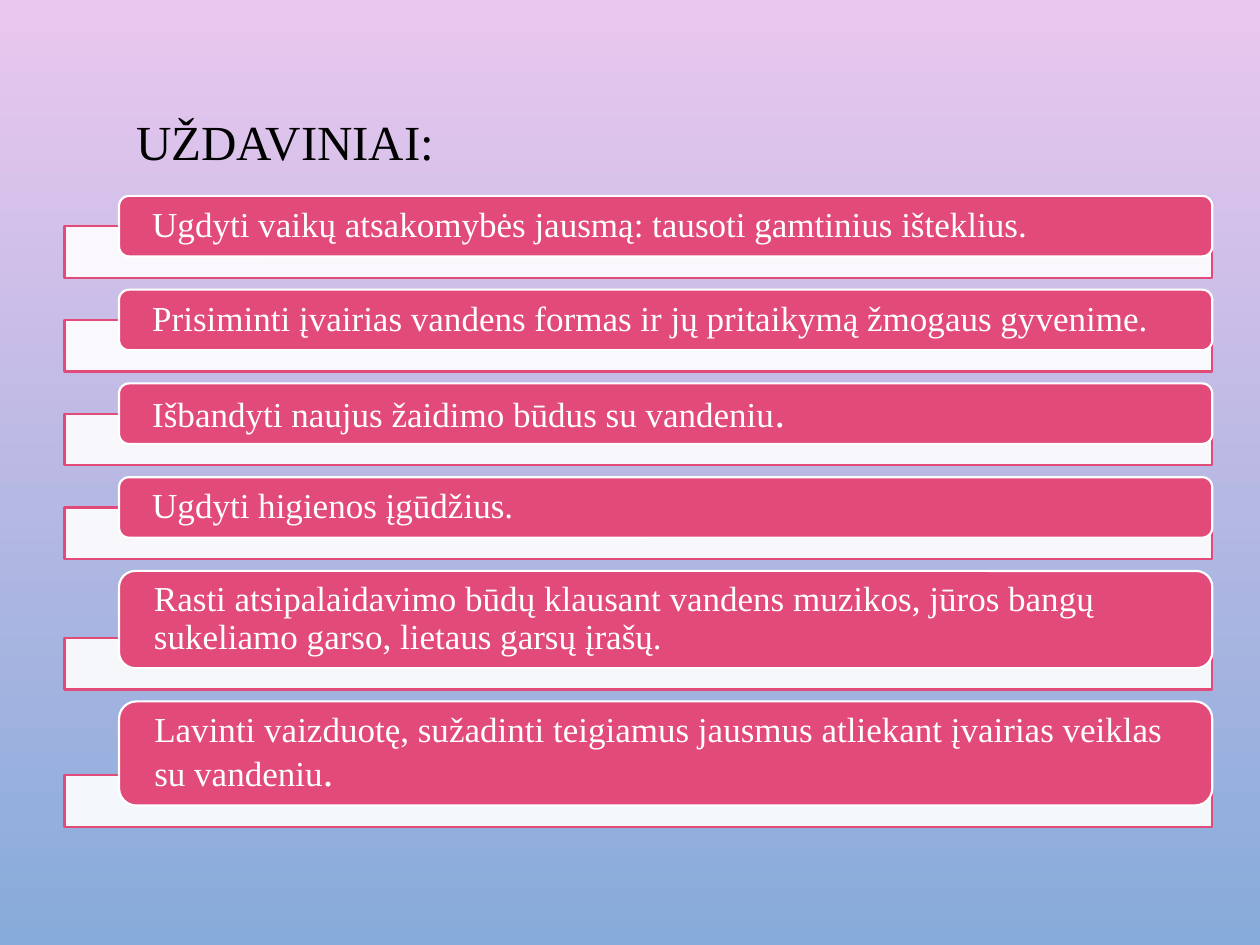
from lxml.etree import SubElement
from pptx import Presentation
from pptx.dml.color import RGBColor
from pptx.enum.shapes import MSO_SHAPE
from pptx.enum.text import MSO_ANCHOR, PP_ALIGN
from pptx.oxml.ns import qn
from pptx.util import Cm, Pt

PINK = RGBColor(0xE2, 0x4A, 0x79)
WHITE = RGBColor(0xFF, 0xFF, 0xFF)
BLACK = RGBColor(0, 0, 0)
LILAC = RGBColor(0xEA, 0xC7, 0xEE)
BLUE = RGBColor(0x87, 0xAB, 0xDA)
FONT = "Times New Roman"

BAR = 1.04
INDENT = 1.1
TAIL = 0.43
GAP = 0.24

TASKS = [
    (1.22, ["Ugdyti vaikų atsakomybės jausmą: tausoti gamtinius išteklius."]),
    (1.22, ["Prisiminti įvairias vandens formas ir jų pritaikymą žmogaus gyvenime."]),
    (1.22, ["Išbandyti naujus žaidimo būdus su vandeniu", "."]),
    (1.22, ["Ugdyti higienos įgūdžius."]),
    (1.96, ["Rasti atsipalaidavimo būdų klausant vandens muzikos, jūros bangų "
            "sukeliamo garso, lietaus garsų įrašų."]),
    (2.1, ["Lavinti vaizduotę, sužadinti teigiamus jausmus atliekant įvairias "
           "veiklas su vandeniu", "."]),
]


def set_font(para, size, color):
    para.font.name = FONT
    para.font.size = Pt(size)
    para.font.color.rgb = color


def add_box(slide, kind, left, top, width, height, fill, line):
    box = slide.shapes.add_shape(kind, Cm(left), Cm(top), Cm(width), Cm(height))
    box.shadow.inherit = False
    box.fill.solid()
    box.fill.fore_color.rgb = fill
    box.line.color.rgb = line
    box.line.width = Pt(1.25)
    return box


def add_task(slide, left, top, width, height, parts):
    bar = add_box(slide, MSO_SHAPE.RECTANGLE, left, top + height + TAIL - BAR,
                  width, BAR, WHITE, PINK)
    tint = bar.fill._xPr.find(qn("a:solidFill"))[0]
    SubElement(tint, qn("a:alpha")).set("val", "90000")

    pill = add_box(slide, MSO_SHAPE.ROUNDED_RECTANGLE, left + INDENT, top,
                   width - INDENT, height, PINK, WHITE)
    frame = pill.text_frame
    frame.word_wrap = True
    frame.vertical_anchor = MSO_ANCHOR.MIDDLE
    frame.margin_left = frame.margin_right = Cm(0.61)
    frame.margin_top = frame.margin_bottom = 0
    para = frame.paragraphs[0]
    para.alignment = PP_ALIGN.LEFT
    para.line_spacing = 0.9
    set_font(para, 20, WHITE)
    for part in parts:
        run = para.add_run()
        run.text = part
        if part == ".":
            run.font.size = Pt(24)


def add_list(slide, left, top, width):
    for height, parts in TASKS:
        add_task(slide, left, top, width, height, parts)
        top += height + TAIL + GAP


def set_title(slide, left, top, width, height):
    title = slide.shapes.title
    title.left, title.top = Cm(left), Cm(top)
    title.width, title.height = Cm(width), Cm(height)
    frame = title.text_frame
    frame.text = "UŽDAVINIAI:"
    frame.word_wrap = False
    frame.vertical_anchor = MSO_ANCHOR.TOP
    para = frame.paragraphs[0]
    para.alignment = PP_ALIGN.LEFT
    set_font(para, 28, BLACK)


def set_back(slide):
    fill = slide.background.fill
    fill.gradient()
    fill.gradient_angle = 270
    for stop, color in zip(fill.gradient_stops, (LILAC, BLUE)):
        stop.color.rgb = color


def main():
    deck = Presentation()
    deck.slide_width, deck.slide_height = Cm(25.4), Cm(19.05)
    slide = deck.slides.add_slide(deck.slide_layouts[5])
    set_back(slide)
    set_title(slide, 2.49, 2.13, 7.19, 1.45)
    add_list(slide, 1.3, 3.95, 23.14)
    deck.save("out.pptx")


if __name__ == "__main__":
    main()
